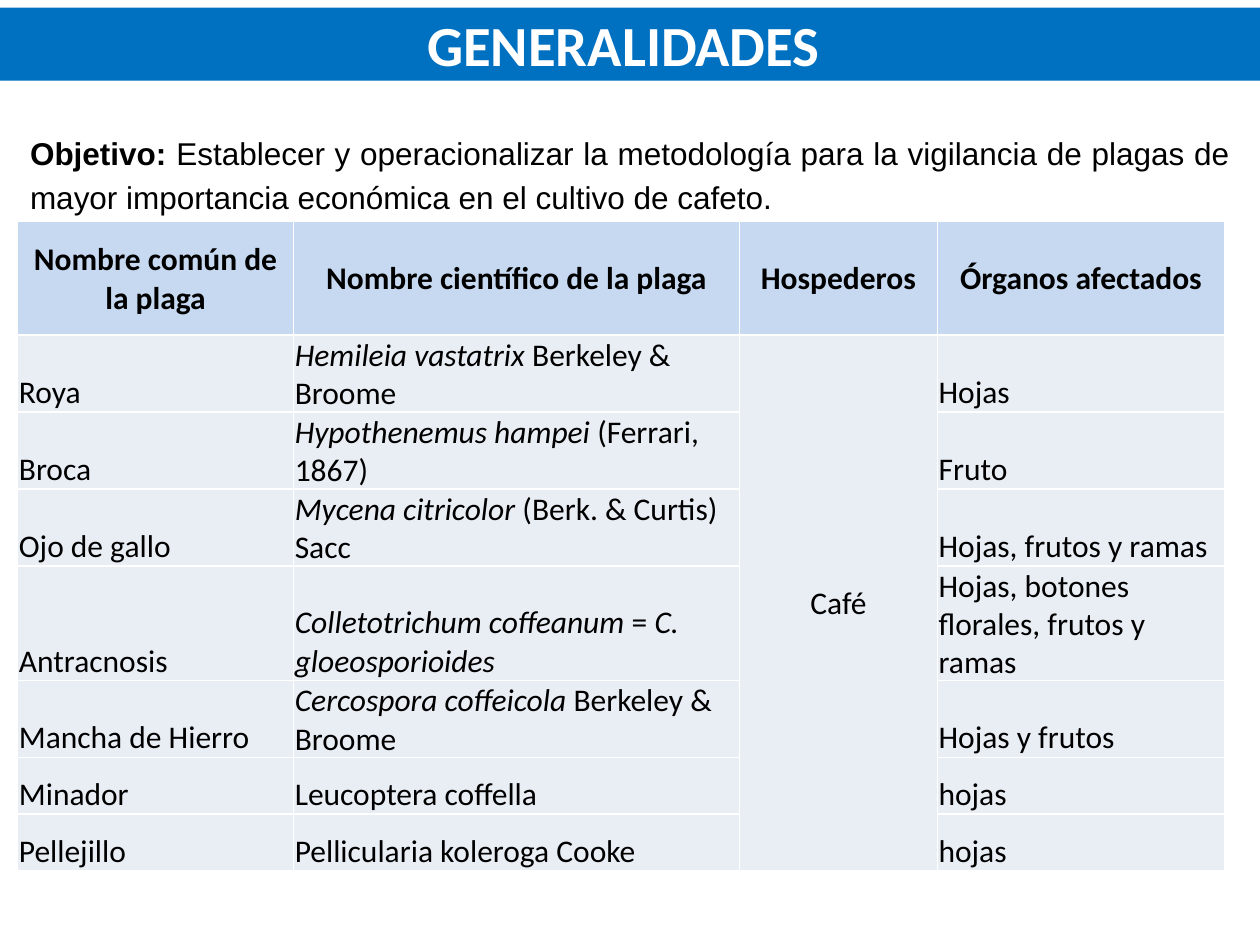
from lxml.etree import SubElement
from pptx import Presentation
from pptx.dml.color import RGBColor
from pptx.enum.shapes import MSO_SHAPE
from pptx.enum.text import MSO_ANCHOR, PP_ALIGN
from pptx.oxml.ns import qn
from pptx.util import Inches, Pt

BLUE = RGBColor(0x00, 0x70, 0xC0)
HEADER_FILL = RGBColor(0xC6, 0xD9, 0xF1)
BODY_FILL = RGBColor(0xE9, 0xED, 0xF4)
WHITE = RGBColor(0xFF, 0xFF, 0xFF)
BLACK = RGBColor(0x00, 0x00, 0x00)

COL_WIDTHS = [2.19, 3.54, 1.57, 2.28]
ROW_HEIGHTS = [0.9, 0.6, 0.6, 0.6, 0.9, 0.6, 0.45, 0.45]
HEADERS = ["Nombre común de la plaga", "Nombre científico de la plaga",
           "Hospederos", "Órganos afectados"]
HOST = "Café"
HOST_COL = 2
PESTS = [
    ("Roya", [("Hemileia vastatrix", True), (" Berkeley & Broome", False)], "Hojas"),
    ("Broca", [("Hypothenemus hampei", True), (" (Ferrari, 1867)", False)], "Fruto"),
    ("Ojo de gallo", [("Mycena citricolor", True), (" (Berk. & Curtis) Sacc", False)],
     "Hojas, frutos y ramas"),
    ("Antracnosis", [("Colletotrichum coffeanum", True), (" = ", False),
                     ("C. gloeosporioides", True)],
     "Hojas, botones florales, frutos y ramas"),
    ("Mancha de Hierro", [("Cercospora coffeicola", True), (" Berkeley & Broome", False)],
     "Hojas y frutos"),
    ("Minador", [("Leucoptera coffella", False)], "hojas"),
    ("Pellejillo", [("Pellicularia koleroga Cooke", False)], "hojas"),
]


def add_run(p, text, font="Calibri", size=18, color=BLACK, bold=False, italic=False):
    r = p.add_run()
    r.text = text
    r.font.name = font
    r.font.size = Pt(size)
    r.font.color.rgb = color
    r.font.bold = bold
    r.font.italic = italic


def add_title(s, text):
    sp = s.shapes.add_shape(MSO_SHAPE.RECTANGLE, 0, Inches(0.06), Inches(10), Inches(0.58))
    sp.shadow.inherit = False
    sp.fill.solid()
    sp.fill.fore_color.rgb = BLUE
    sp.line.fill.background()
    tf = sp.text_frame
    tf.vertical_anchor = MSO_ANCHOR.MIDDLE
    p = tf.paragraphs[0]
    p.alignment = PP_ALIGN.CENTER
    add_run(p, text, size=32.4, color=WHITE, bold=True)


def add_objective(s, label, text):
    tf = s.shapes.add_textbox(Inches(0.14), Inches(0.97), Inches(9.72), Inches(0.78)).text_frame
    tf.word_wrap = True
    p = tf.paragraphs[0]
    p.alignment = PP_ALIGN.JUSTIFY
    p.line_spacing = 1.15
    add_run(p, label, font="Arial", bold=True)
    add_run(p, text, font="Arial")


def add_borders(cell):
    tc_pr = cell._tc.get_or_add_tcPr()
    for side in ("a:lnL", "a:lnR", "a:lnT", "a:lnB"):
        ln = SubElement(tc_pr, qn(side), w=str(Pt(1)))
        fill = SubElement(ln, qn("a:solidFill"))
        SubElement(fill, qn("a:srgbClr"), val=str(WHITE))


def style_cell(cell, fill):
    add_borders(cell)
    cell.fill.solid()
    cell.fill.fore_color.rgb = fill
    cell.margin_left = cell.margin_right = cell.margin_top = Inches(0.01)
    cell.margin_bottom = 0


def fill_cell(cell, runs, anchor=MSO_ANCHOR.BOTTOM, align=PP_ALIGN.LEFT, bold=False):
    cell.vertical_anchor = anchor
    p = cell.text_frame.paragraphs[0]
    p.alignment = align
    for text, italic in runs:
        add_run(p, text, bold=bold, italic=italic)


def add_pest_table(s):
    table = s.shapes.add_table(len(ROW_HEIGHTS), len(COL_WIDTHS), Inches(0.14), Inches(1.76),
                               Inches(sum(COL_WIDTHS)), Inches(sum(ROW_HEIGHTS))).table
    for col, width in zip(table.columns, COL_WIDTHS):
        col.width = Inches(width)
    for i, (row, height) in enumerate(zip(table.rows, ROW_HEIGHTS)):
        row.height = Inches(height)
        for cell in row.cells:
            style_cell(cell, BODY_FILL if i else HEADER_FILL)
    for j, header in enumerate(HEADERS):
        fill_cell(table.cell(0, j), [(header, False)], MSO_ANCHOR.MIDDLE, PP_ALIGN.CENTER, True)
    for i, (common, scientific, organs) in enumerate(PESTS, 1):
        fill_cell(table.cell(i, 0), [(common, False)])
        fill_cell(table.cell(i, 1), scientific)
        fill_cell(table.cell(i, 3), [(organs, False)])
    host = table.cell(1, HOST_COL)
    host.merge(table.cell(len(PESTS), HOST_COL))
    fill_cell(host, [(HOST, False)], MSO_ANCHOR.MIDDLE, PP_ALIGN.CENTER)


def main():
    prs = Presentation()
    prs.slide_width = Inches(10)
    prs.slide_height = Inches(7.5)
    s = prs.slides.add_slide(prs.slide_layouts[6])
    add_title(s, "GENERALIDADES ")
    add_objective(s, "Objetivo:",
                  " Establecer y operacionalizar la metodología para la vigilancia de plagas "
                  "de mayor importancia económica en el cultivo de cafeto.")
    add_pest_table(s)
    prs.save("out.pptx")


if __name__ == "__main__":
    main()
